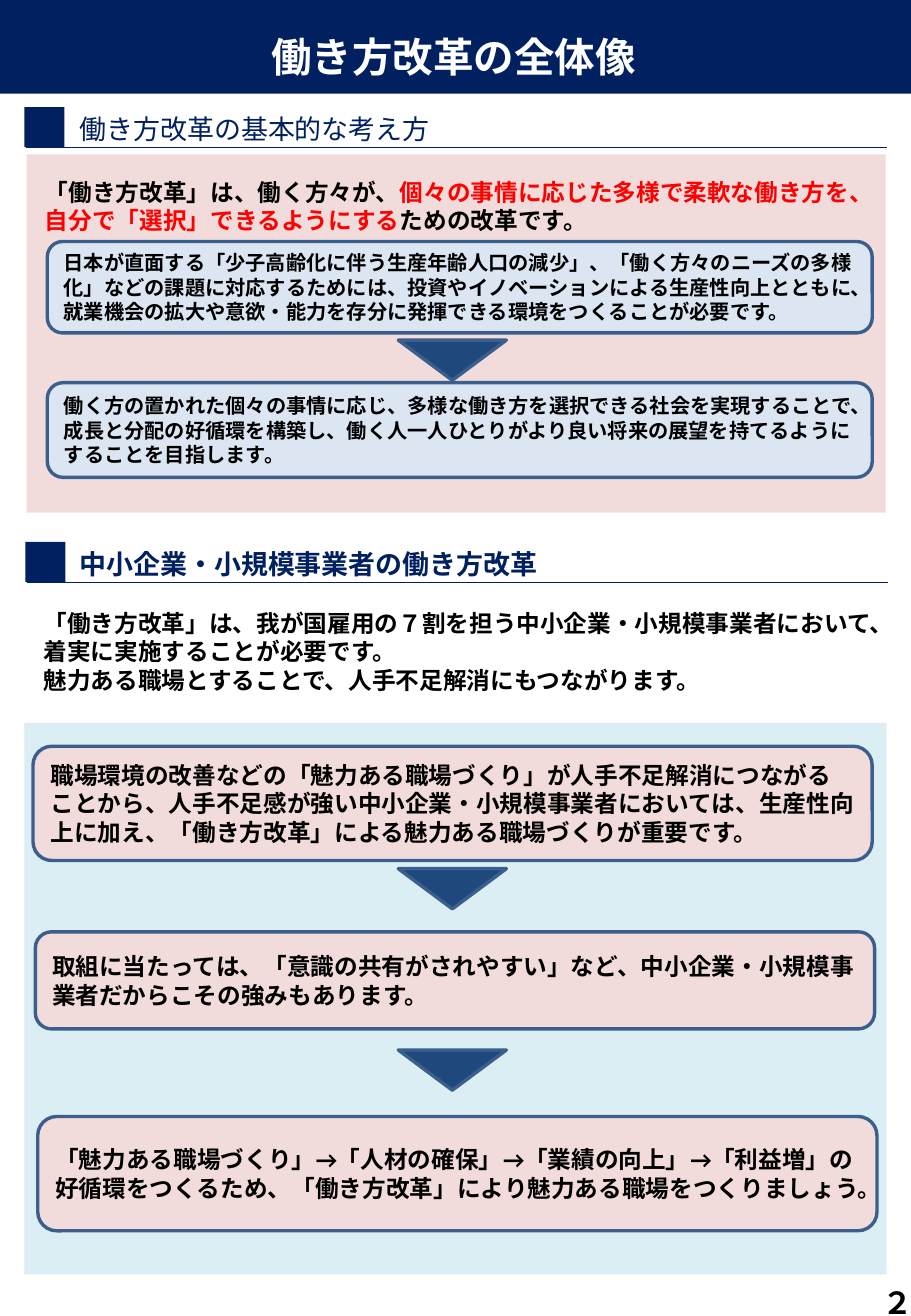
from dataclasses import dataclass

from lxml import etree
from pptx import Presentation
from pptx.dml.color import RGBColor
from pptx.enum.lang import MSO_LANGUAGE_ID
from pptx.enum.shapes import MSO_CONNECTOR, MSO_SHAPE
from pptx.enum.text import MSO_ANCHOR, PP_ALIGN
from pptx.oxml.ns import qn
from pptx.util import Cm, Pt

RECT = MSO_SHAPE.RECTANGLE
ROUND = MSO_SHAPE.ROUNDED_RECTANGLE
MERGE = MSO_SHAPE.FLOWCHART_MERGE
LINE = MSO_CONNECTOR.STRAIGHT
TOP, MIDDLE = MSO_ANCHOR.TOP, MSO_ANCHOR.MIDDLE
LEFT, CENTER, RIGHT = PP_ALIGN.LEFT, PP_ALIGN.CENTER, PP_ALIGN.RIGHT
JAPANESE = MSO_LANGUAGE_ID.JAPANESE


@dataclass(frozen=True)
class Theme:
    """Colours, fonts and type sizes of the slide."""
    navy: str = "002060"
    pink: str = "F2DCDB"
    aqua: str = "DBEEF4"
    pale: str = "DCE6F2"
    arrow: str = "1F497D"
    edge: str = "3A5F8C"
    white: str = "FFFFFF"
    black: str = "000000"
    red: str = "FF0000"
    gothic: str = "Noto Sans CJK JP"
    latin: str = "Calibri"
    title: int = 24
    page: int = 18
    head: int = 16
    body: int = 14
    note: int = 12


THEME = Theme()


def write(shape, *paras, size=THEME.body, font=THEME.latin, color=THEME.black,
          bold=True, align=LEFT, anchor=TOP, inset=(0.25, 0.13, 0.25, 0.13)):
    """Fill a shape with paragraphs, each a string or a list of (text, colour)."""
    frame = shape.text_frame
    frame.word_wrap = True
    frame.vertical_anchor = anchor
    (frame.margin_left, frame.margin_top,
     frame.margin_right, frame.margin_bottom) = map(Cm, inset)
    for index, para in enumerate(paras):
        line = frame.add_paragraph() if index else frame.paragraphs[0]
        line.alignment = align
        parts = [(para, color)] if isinstance(para, str) else para
        for text, tint in parts:
            run = line.add_run()
            run.text = text
            style = run.font
            style.size, style.bold = Pt(size), bold
            style.language_id = JAPANESE
            style.color.rgb = RGBColor.from_string(tint)
            style.name = font
            etree.SubElement(run._r.get_or_add_rPr(), qn("a:ea"), typeface=font)


def block(shapes, kind, box, fill, edge=None):
    """Add a filled preset shape, outlined when an edge colour is given."""
    shape = shapes.add_shape(kind, *map(Cm, box))
    shape.shadow.inherit = False
    shape.fill.solid()
    shape.fill.fore_color.rgb = RGBColor.from_string(fill)
    if edge:
        shape.line.color.rgb = RGBColor.from_string(edge)
        shape.line.width = Pt(2)
    else:
        shape.line.fill.background()
    return shape


def label(shapes, box, *paras, **style):
    """Add a text box."""
    write(shapes.add_textbox(*map(Cm, box)), *paras, **style)


def card(shapes, box, fill, text, size=THEME.body):
    """Add a rounded box with a statement."""
    shape = block(shapes, ROUND, box, fill, THEME.edge)
    write(shape, text, size=size, anchor=MIDDLE)


def arrow(shapes, top):
    """Add a downward triangle between two cards."""
    block(shapes, MERGE, (8.33, top, 2.26, 0.84), THEME.arrow, THEME.edge)


def heading(shapes, left, top, text, bold):
    """Add a section heading: square marker, text and rule."""
    group = shapes.add_group_shape().shapes
    label(group, (-0.18, top - 0.09, 15.06, 1.09), text, size=THEME.head,
          font=THEME.gothic, color=THEME.navy, bold=bold, anchor=MIDDLE,
          inset=(1.85, 0.1, 0.18, 0.1))
    block(group, RECT, (left, top, 0.84, 0.84), THEME.navy)
    base = Cm(top + 0.84)
    rule = group.add_connector(LINE, Cm(left + 0.03), base, Cm(left + 18.03), base)
    rule.line.color.rgb = RGBColor.from_string(THEME.navy)
    rule.line.width = Pt(0.75)
    etree.SubElement(rule._element.spPr, qn("a:effectLst"))


def main():
    """Build and save the slide."""
    deck = Presentation()
    deck.slide_width, deck.slide_height = Cm(19.05), Cm(27.51)
    shapes = deck.slides.add_slide(deck.slide_layouts[6]).shapes

    block(shapes, RECT, (0.51, 15.11, 18.03, 11.53), THEME.aqua)
    banner = block(shapes, RECT, (-0.13, -0.05, 19.23, 2.01), THEME.navy)
    write(banner, "働き方改革の全体像", size=THEME.title, font=THEME.gothic,
          color=THEME.white, align=CENTER, anchor=TOP, inset=(0.25, 0.71, 0.25, 0))
    heading(shapes, 0.51, 2.24, "働き方改革の基本的な考え方", False)
    block(shapes, RECT, (0.56, 3.23, 17.96, 7.49), THEME.pink)
    heading(shapes, 0.53, 11.33, "中小企業・小規模事業者の働き方改革", True)
    label(shapes, (14.88, 26.49, 4.45, 1.47), "２", size=THEME.page,
          font=THEME.gothic, align=RIGHT, anchor=MIDDLE)

    label(shapes, (0.69, 3.58, 17.55, 1.45), [
        ("「働き方改革」は、働く方々が、", THEME.black),
        ("個々の事情に応じた多様で柔軟な働き方を、自分で「選択」できるようにする", THEME.red),
        ("ための改革です。", THEME.black)], font=THEME.gothic)
    card(shapes, (0.99, 5.05, 17.25, 1.91), THEME.pale,
         "日本が直面する「少子高齢化に伴う生産年齢人口の減少」、「働く方々のニーズの多様化」"
         "などの課題に対応するためには、投資やイノベーションによる生産性向上とともに、"
         "就業機会の拡大や意欲・能力を存分に発揮できる環境をつくることが必要です。", THEME.note)
    card(shapes, (0.99, 8, 17.25, 1.98), THEME.pale,
         "働く方の置かれた個々の事情に応じ、多様な働き方を選択できる社会を実現することで、"
         "成長と分配の好循環を構築し、働く人一人ひとりがより良い将来の展望を持てるように"
         "することを目指します。", THEME.note)

    label(shapes, (0.66, 12.6, 17.91, 2.06),
          "「働き方改革」は、我が国雇用の７割を担う中小企業・小規模事業者において、"
          "着実に実施することが必要です。",
          "魅力ある職場とすることで、人手不足解消にもつながります。")
    card(shapes, (0.69, 15.6, 17.55, 2.39), THEME.pink,
         "職場環境の改善などの「魅力ある職場づくり」が人手不足解消につながることから、"
         "人手不足感が強い中小企業・小規模事業者においては、生産性向上に加え、"
         "「働き方改革」による魅力ある職場づくりが重要です。")
    card(shapes, (0.74, 19.48, 17.55, 2.03), THEME.pink,
         "取組に当たっては、「意識の共有がされやすい」など、"
         "中小企業・小規模事業者だからこその強みもあります。")
    card(shapes, (0.79, 23.34, 17.55, 2.39), THEME.pink,
         "「魅力ある職場づくり」→「人材の確保」→「業績の向上」→「利益増」の好循環をつくるため、"
         "「働き方改革」により魅力ある職場をつくりましょう。")
    for top in (7.11, 18.16, 21.95):
        arrow(shapes, top)

    deck.save("out.pptx")


if __name__ == "__main__":
    main()
